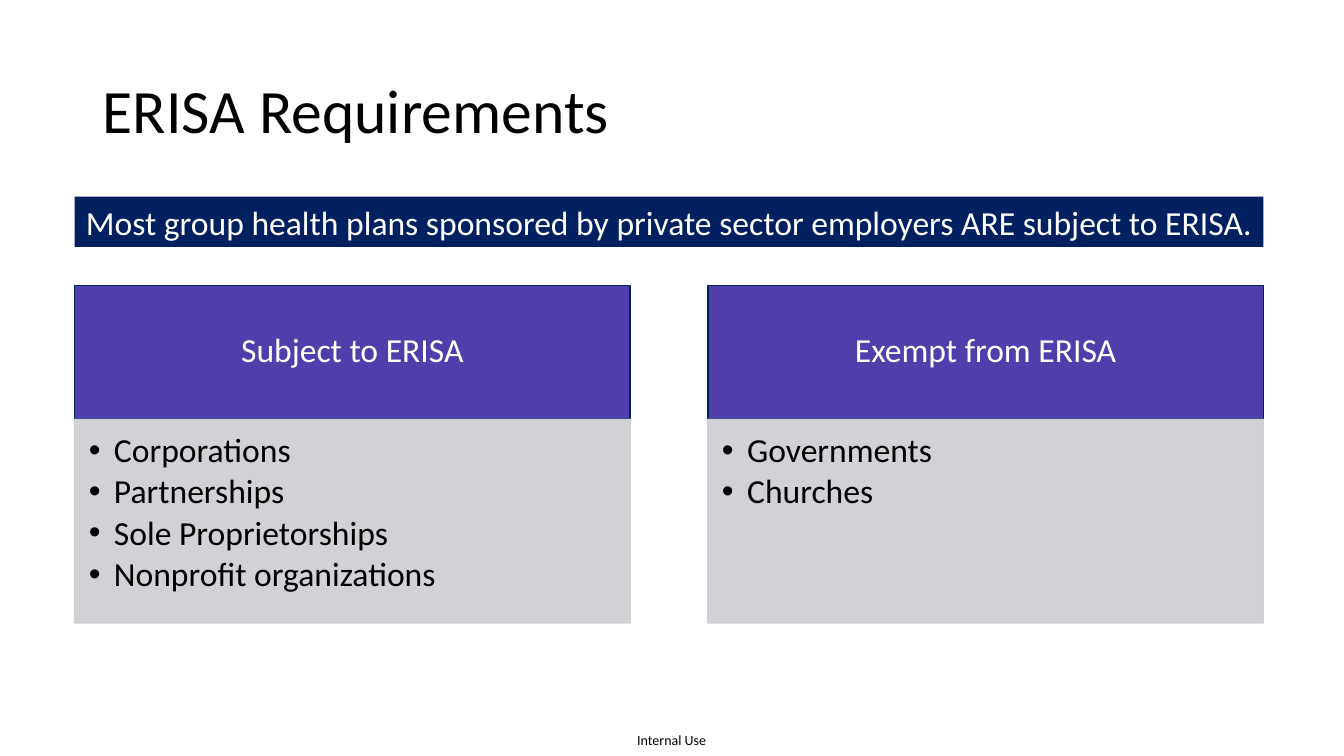
from pptx import Presentation
from pptx import util as u
from pptx.dml import color
from pptx.enum import shapes, text
from pptx.oxml import ns
from lxml import etree

FONT = "Calibri"
COLORS = {
    "navy": "002060",
    "purple": "4E3FAB",
    "gray": "CCCDD2",
    "white": "FFFFFF",
    "black": "000000",
}
COLUMNS = [
    ("Subject to ERISA",
     ["Corporations", "Partnerships", "Sole Proprietorships", "Nonprofit organizations"]),
    ("Exempt from ERISA", ["Governments", "Churches"]),
]
LEFT, WIDTH, GAP = 0.74, 11.79, 0.77
HEADER_HEIGHT, BODY_OFFSET, BODY_HEIGHT = 1.32, 1.33, 2.02


def rgb(name):
    return color.RGBColor.from_string(COLORS[name])


def style_paragraph(para, size, tint, align=text.PP_ALIGN.LEFT, spacing=1.0, after=0):
    para.alignment = align
    para.line_spacing = spacing
    para.space_before = u.Pt(0)
    para.space_after = u.Pt(after)
    for span in para.runs:
        span.font.name = FONT
        span.font.size = u.Pt(size)
        span.font.color.rgb = rgb(tint)


def set_frame(frame, insets, anchor, wrap=True):
    frame.word_wrap = wrap
    frame.vertical_anchor = anchor
    (frame.margin_left, frame.margin_top,
     frame.margin_right, frame.margin_bottom) = [u.Inches(inset) for inset in insets]


def add_box(slide, left, top, width, height, fill, line=None):
    box = slide.shapes.add_shape(
        shapes.MSO_SHAPE.RECTANGLE,
        u.Inches(left), u.Inches(top), u.Inches(width), u.Inches(height))
    box.shadow.inherit = False
    box.fill.solid()
    box.fill.fore_color.rgb = rgb(fill)
    if line:
        box.line.color.rgb = rgb(line)
        box.line.width = u.Pt(1)
    else:
        box.line.fill.background()
    return box


def set_opacity(box, percent):
    """Apply one opacity to the fill and the outline."""
    for tint in box._element.spPr.iter(ns.qn("a:srgbClr")):
        etree.SubElement(tint, ns.qn("a:alpha"), val=str(percent * 1000))


def add_bullet(para):
    para.level = 1
    props = para._p.get_or_add_pPr()
    props.set("marL", str(u.Inches(0.25)))
    props.set("indent", str(u.Inches(-0.25)))
    etree.SubElement(props, ns.qn("a:buFont"), typeface="Arial")
    etree.SubElement(props, ns.qn("a:buChar"), char="•")


def add_title(slide, left, top, width, height):
    title = slide.shapes.title
    title.left, title.top = u.Inches(left), u.Inches(top)
    title.width, title.height = u.Inches(width), u.Inches(height)
    title.text_frame.text = "ERISA Requirements"
    set_frame(title.text_frame, (0.1, 0.05, 0.1, 0.05), text.MSO_ANCHOR.MIDDLE)
    style_paragraph(title.text_frame.paragraphs[0], 44, "black", spacing=0.9)


def add_banner(slide, left, top, width, height):
    banner = add_box(slide, left, top, width, height, "navy")
    frame = banner.text_frame
    frame.text = ("Most group health plans sponsored by private sector employers "
                  "ARE subject to ERISA.")
    set_frame(frame, (0.1, 0.05, 0.1, 0.05), text.MSO_ANCHOR.TOP, wrap=False)
    style_paragraph(frame.paragraphs[0], 24, "white", text.PP_ALIGN.CENTER)


def add_column(slide, left, top, width, heading, items):
    # Heading
    header = add_box(slide, left, top, width, HEADER_HEIGHT, "purple", "navy")
    header.text_frame.text = heading
    set_frame(header.text_frame, (0.19, 0.11, 0.19, 0.11), text.MSO_ANCHOR.MIDDLE)
    style_paragraph(header.text_frame.paragraphs[0], 24, "white",
                    text.PP_ALIGN.CENTER, 0.9, 8.4)

    # Bulleted list
    body = add_box(slide, left, top + BODY_OFFSET, width, BODY_HEIGHT, "gray", "gray")
    set_opacity(body, 90)
    frame = body.text_frame
    frame.text = "\n".join(items)
    set_frame(frame, (0.14, 0.14, 0.19, 0.21), text.MSO_ANCHOR.TOP)
    for para in frame.paragraphs:
        style_paragraph(para, 24, "black", spacing=0.9, after=3.6)
        add_bullet(para)


def add_footer(slide, left, top, width, height):
    footer = slide.shapes.add_textbox(
        u.Inches(left), u.Inches(top), u.Inches(width), u.Inches(height))
    footer.text_frame.text = "Internal Use"
    set_frame(footer.text_frame, (0, 0, 0, 0), text.MSO_ANCHOR.TOP, wrap=False)
    style_paragraph(footer.text_frame.paragraphs[0], 10, "black")


def main():
    deck = Presentation()
    deck.slide_width, deck.slide_height = u.Inches(13.33), u.Inches(7.5)
    page = deck.slides.add_slide(deck.slide_layouts.get_by_name("Title Only"))

    add_title(page, 0.92, 0.4, 11.5, 1.45)
    add_banner(page, LEFT, 1.95, WIDTH, 0.5)
    column_width = (WIDTH - GAP) / 2
    for index, (heading, items) in enumerate(COLUMNS):
        left = LEFT + index * (column_width + GAP)
        add_column(page, left, 2.83, column_width, heading, items)
    add_footer(page, 6.32, 7.26, 0.72, 0.17)

    deck.save("out.pptx")


if __name__ == "__main__":
    main()
